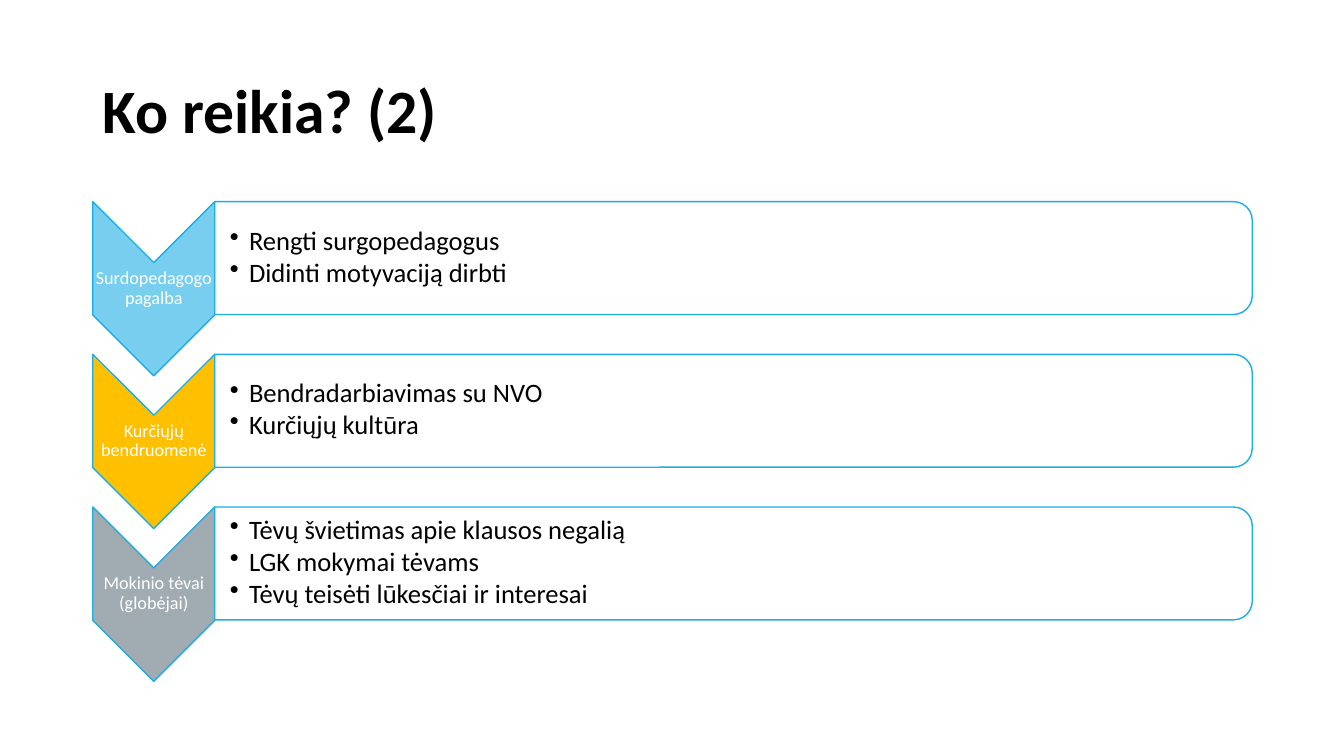
from dataclasses import dataclass

from lxml.etree import SubElement
from pptx import Presentation
from pptx.dml.color import RGBColor
from pptx.enum.shapes import MSO_SHAPE
from pptx.enum.text import MSO_ANCHOR, MSO_AUTO_SIZE, PP_ALIGN
from pptx.oxml.ns import qn
from pptx.util import Inches, Pt

FONT = "Calibri"
ACCENT = "1CADE4"
BLACK = "000000"
WHITE = "FFFFFF"

# Row geometry in inches
FIRST_TOP, LAST_TOP = 2.0, 5.03
CHEVRON_LEFT, CHEVRON_WIDTH, CHEVRON_HEIGHT = 0.92, 1.21, 1.73
PANEL_LEFT, PANEL_WIDTH, PANEL_HEIGHT = 2.13, 10.29, 1.12
LABEL_OFFSET, LABEL_HEIGHT = 0.6, 0.52
LIST_OFFSET, LIST_WIDTH, LIST_HEIGHT = 0.05, 10.24, 1.01
BULLET_INDENT = 0.19
INSET = 0.01


@dataclass(frozen=True)
class Need:
    label: str
    color: str
    items: tuple[str, ...]


NEEDS = [
    Need("Surdopedagogo pagalba", "77CEEF",
         ("Rengti surgopedagogus", "Didinti motyvaciją dirbti")),
    Need("Kurčiųjų bendruomenė", "FFC000",
         ("Bendradarbiavimas su NVO", "Kurčiųjų kultūra")),
    Need("Mokinio tėvai (globėjai)", "A1ACB2",
         ("Tėvų švietimas apie klausos negalią", "LGK mokymai tėvams",
          "Tėvų teisėti lūkesčiai ir interesai")),
]


def rgb(color: str) -> RGBColor:
    return RGBColor.from_string(color)


def format_paragraph(paragraph, size: float, color: str, bold: bool = False) -> None:
    paragraph.line_spacing = 0.9
    for run in paragraph.runs:
        run.font.name = FONT
        run.font.size = Pt(size)
        run.font.bold = bold
        run.font.color.rgb = rgb(color)


def add_turned_shape(slide, kind: MSO_SHAPE, left: float, top: float,
                     width: float, height: float, color: str):
    """Add a shape turned by 90 degrees that covers the given visible box."""
    shift = (width - height) / 2
    shape = slide.shapes.add_shape(kind, Inches(left + shift), Inches(top - shift),
                                   Inches(height), Inches(width))
    shape.rotation = 90
    shape.shadow.inherit = False
    shape.fill.solid()
    shape.fill.fore_color.rgb = rgb(color)
    shape.line.color.rgb = rgb(ACCENT)
    shape.line.width = Pt(1)
    return shape


def add_text_frame(slide, left: float, top: float, width: float, height: float,
                   left_inset: float, text: str):
    box = slide.shapes.add_textbox(Inches(left), Inches(top), Inches(width), Inches(height))
    frame = box.text_frame
    frame.word_wrap = True
    frame.vertical_anchor = MSO_ANCHOR.MIDDLE
    frame.margin_left = Inches(left_inset)
    frame.margin_top = frame.margin_right = frame.margin_bottom = Inches(INSET)
    frame.text = text
    return frame


def add_bullet(paragraph) -> None:
    properties = paragraph._p.get_or_add_pPr()
    properties.set("marL", str(Inches(BULLET_INDENT)))
    properties.set("indent", str(-Inches(BULLET_INDENT)))
    SubElement(properties, qn("a:buChar")).set("char", "•")


def add_need(slide, need: Need, top: float) -> None:
    # Chevron and its label
    add_turned_shape(slide, MSO_SHAPE.CHEVRON, CHEVRON_LEFT, top,
                     CHEVRON_WIDTH, CHEVRON_HEIGHT, need.color)
    label = add_text_frame(slide, CHEVRON_LEFT, top + LABEL_OFFSET, CHEVRON_WIDTH,
                           LABEL_HEIGHT, INSET, need.label)
    label.paragraphs[0].alignment = PP_ALIGN.CENTER
    format_paragraph(label.paragraphs[0], 13, WHITE)

    # Panel and its bullet list
    panel = add_turned_shape(slide, MSO_SHAPE.ROUND_2_SAME_RECTANGLE, PANEL_LEFT, top,
                             PANEL_WIDTH, PANEL_HEIGHT, WHITE)
    panel_color = panel.fill._xPr.find(qn("a:solidFill"))[0]
    SubElement(panel_color, qn("a:alpha")).set("val", "90000")
    bullets = add_text_frame(slide, PANEL_LEFT, top + LIST_OFFSET, LIST_WIDTH,
                             LIST_HEIGHT, 0.15, "\n".join(need.items))
    for paragraph in bullets.paragraphs:
        add_bullet(paragraph)
        paragraph.level = 1
        paragraph.space_after = Pt(2.2)
        format_paragraph(paragraph, 19, BLACK)


def add_title(slide, text: str) -> None:
    title = slide.shapes.title
    title.left, title.top = Inches(0.92), Inches(0.4)
    title.width, title.height = Inches(11.5), Inches(1.45)
    frame = title.text_frame
    frame.text = text
    frame.auto_size = MSO_AUTO_SIZE.NONE
    frame.vertical_anchor = MSO_ANCHOR.MIDDLE
    frame.paragraphs[0].alignment = PP_ALIGN.LEFT
    format_paragraph(frame.paragraphs[0], 44, BLACK, bold=True)


def main() -> None:
    presentation = Presentation()
    presentation.slide_width = Inches(13.33)
    presentation.slide_height = Inches(7.5)
    slide = presentation.slides.add_slide(presentation.slide_layouts[5])

    add_title(slide, "Ko reikia? (2)")
    pitch = (LAST_TOP - FIRST_TOP) / (len(NEEDS) - 1)
    for index, need in enumerate(NEEDS):
        add_need(slide, need, FIRST_TOP + index * pitch)

    presentation.save("out.pptx")


if __name__ == "__main__":
    main()
